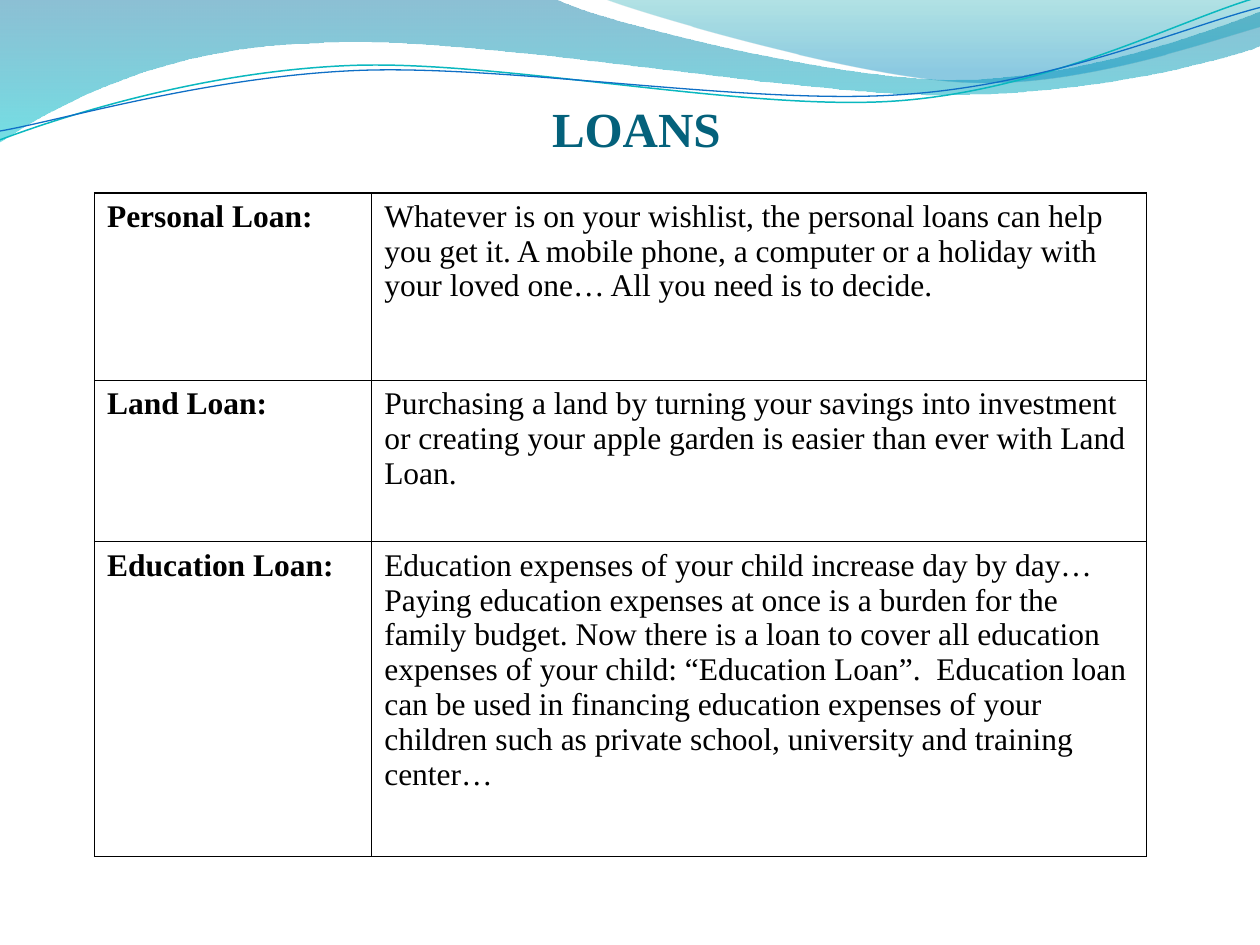
from math import cos, radians, sin
from pptx import Presentation
from pptx.dml.color import RGBColor
from pptx.enum.text import MSO_ANCHOR as Anchor, MSO_AUTO_SIZE as Fit, PP_ALIGN as Align
from pptx.oxml.ns import qn
from pptx.util import Inches, Pt
from lxml.etree import SubElement

TILT = 2.7
rgb = RGBColor.from_string


def draw_path(shapes, start, segments, close, tilt=0, center=(0, 0)):
    c, d = cos(radians(tilt)), sin(radians(tilt))
    pts = [start] + [seg[i:i + 2] for seg in segments for i in range(0, len(seg), 2)]
    offsets = [(x - center[0], y - center[1]) for x, y in pts]
    pts = [(Inches(center[0] + x * c - y * d), Inches(center[1] + x * d + y * c))
           for x, y in offsets]
    fb = shapes.build_freeform(*pts[0], scale=1.0)
    fb.add_line_segments(pts[1:], close=close)
    sp = fb.convert_to_shape()
    sp.shadow.inherit = False
    sp.rotation = -tilt
    path = next(sp._element.iter(qn('a:path')))
    lines = iter(path.findall(qn('a:lnTo')))
    for seg in segments:
        group = [next(lines) for _ in range(len(seg) // 2)]
        if len(group) == 3:
            curve = SubElement(path, qn('a:cubicBezTo'))
            group[0].addprevious(curve)
            for ln in group:
                curve.append(ln[0])
                path.remove(ln)
    return sp


def style_text(p, text, **fmt):
    r = p.add_run()
    r.text = text
    for name, value in {'name': 'Times New Roman', **fmt}.items():
        setattr(r.font, name, value)
    return r


prs = Presentation()
prs.slide_width, prs.slide_height = Inches(10), Inches(7.5)
s = prs.slides.add_slide(prs.slide_layouts[5])

waves = [
    ((0, 0),
     [(4.4, -0.01), (4.76, 0.17, 6.64, 0.63, 7.58, 0.63), (8.53, 0.63, 9.58, 0.26, 10, 0.09),
      (10.01, 0.36), (9.83, 0.44, 8.7, 0.76, 7.46, 0.75), (6.22, 0.75, 3.82, 0.28, 2.57, 0.34),
      (1.29, 0.36, 0.46, 0.83, -0.01, 1.13), (0, 0)],
     [(0, '0074A1', 45), (1, '00C6CF', 55)]),
    ((4.79, -0.01),
     [(5.09, 0.11, 6.82, 0.62, 7.69, 0.65), (8.56, 0.69, 9.61, 0.32, 10, 0.21), (10, 0),
      (4.79, -0.01)],
     [(0, '00A1A9', 30), (0.8, '008BBF', 45)]),
]
for start, segments, stops in waves:
    sp = draw_path(s.shapes, start, segments, True)
    sp.line.fill.background()
    sp.fill.gradient()
    sp.fill.gradient_angle = 270
    for stop, (pos, color, _) in zip(sp.fill.gradient_stops, stops):
        stop.position = pos
        stop.color.rgb = rgb(color)
    for clr, (_, _, alpha) in zip(sp._element.spPr.iter(qn('a:srgbClr')), stops):
        SubElement(clr, qn('a:alpha'), val=str(alpha * 1000))

curves = [
    ((0, 1.11), [(0.48, 0.93, 1.58, 0.57, 2.77, 0.52), (3.95, 0.47, 5.93, 0.89, 7.13, 0.8),
                 (8.33, 0.71, 9.38, 0.15, 9.98, -0.02)], (4.99, 0.57), '0AB8BF', 0.85),
    ((0, 1.04), [(0.47, 0.96, 1.64, 0.61, 2.83, 0.56), (4.03, 0.51, 5.97, 0.84, 7.17, 0.75),
                 (8.36, 0.67, 9.41, 0.21, 10, 0.06)], (5, 0.59), '0F6FC6', 0.75),
]
for start, segments, center, color, width in curves:
    sp = draw_path(s.shapes, start, segments, False, TILT, center)
    sp.fill.background()
    sp.line.color.rgb = rgb(color)
    sp.line.width = Pt(width)

title = s.shapes.title
box = {'left': 0.55, 'top': 0, 'width': 9, 'height': 1.25}
for name, value in box.items():
    setattr(title, name, Inches(value))
tf = title.text_frame
frame = {'margin_left': 0, 'margin_right': 0, 'margin_top': Inches(0.05), 'margin_bottom': 0,
         'vertical_anchor': Anchor.BOTTOM, 'auto_size': Fit.NONE, 'word_wrap': True}
for name, value in frame.items():
    setattr(tf, name, value)
p = tf.paragraphs[0]
p.alignment = Align.CENTER
style_text(p, 'LOANS', size=Pt(28), bold=True).font.color.rgb = rgb('04617B')
s.shapes._spTree.append(title._element)

loans = [
    ('Personal Loan: ', 1.49,
     'Whatever is on your wishlist, the personal loans can help you get it. A mobile phone, '
     'a computer or a holiday with your loved one… All you need is to decide.'),
    ('Land Loan: ', 1.28,
     'Purchasing a land by turning your savings into investment or creating your\u00a0apple '
     'garden\u00a0is easier than ever with Land Loan.'),
    ('Education Loan: ', 2.5,
     'Education expenses of your child increase day by day… Paying education expenses at once '
     'is a burden for the family budget. Now there is a loan to cover all education expenses '
     'of your child: “Education Loan”.  Education loan can be used in financing education '
     'expenses of your children such as private school, university and training center…'),
]
cols = [2.2, 6.15]
tbl = s.shapes.add_table(len(loans), len(cols), Inches(0.75), Inches(1.53), Inches(sum(cols)),
                         Inches(sum(height for _, height, _ in loans))).table
tbl.first_row = tbl.horz_banding = False
for col, width in zip(tbl.columns, cols):
    col.width = Inches(width)
for row, (name, height, details) in zip(tbl.rows, loans):
    row.height = Inches(height)
    for cell, text, bold in zip(row.cells, (name, details), (True, False)):
        p = cell.text_frame.paragraphs[0]
        style_text(p, text, size=Pt(18), bold=bold).font.color.rgb = rgb('000000')
        tcPr = cell._tc.get_or_add_tcPr()
        for side in ('lnL', 'lnR', 'lnT', 'lnB'):
            ln = SubElement(tcPr, qn('a:' + side), w=str(Pt(1)))
            SubElement(SubElement(ln, qn('a:solidFill')), qn('a:srgbClr'), val='000000')
        cell.fill.background()

prs.save("out.pptx")
